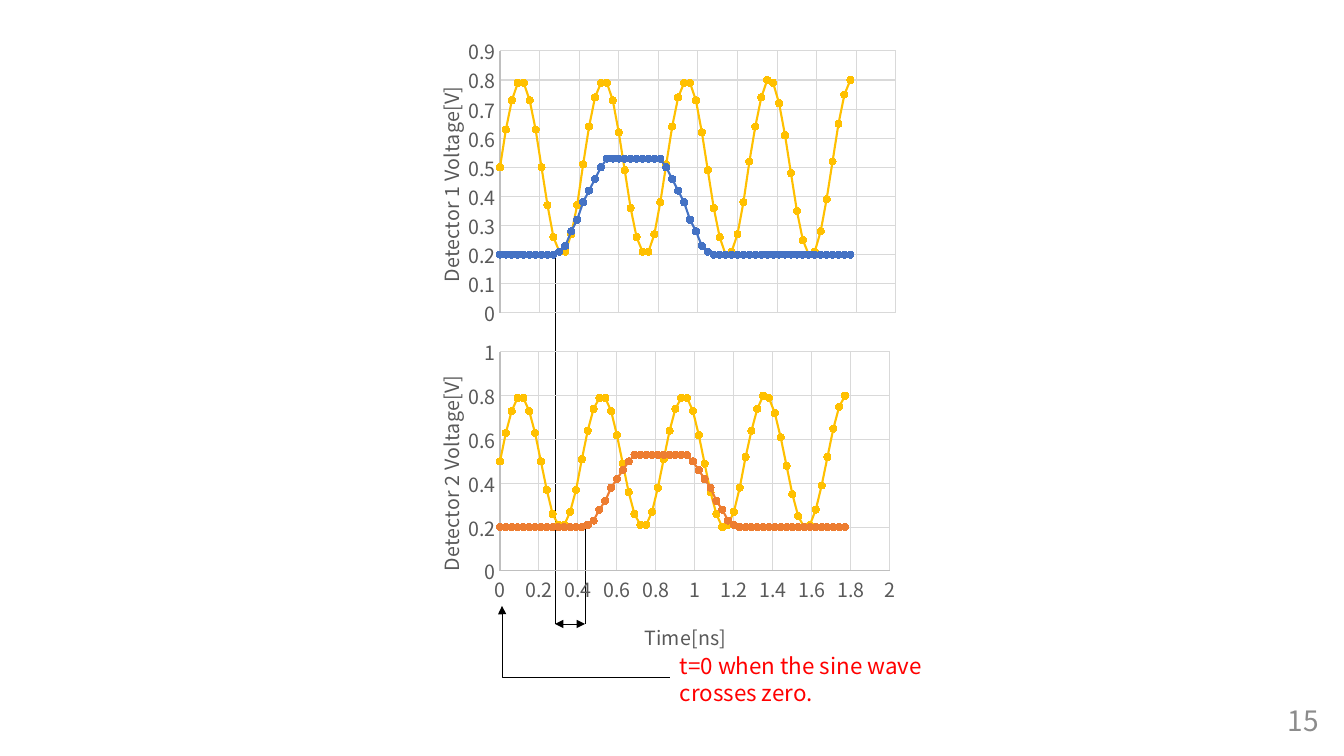
from math import sin

from lxml.etree import SubElement
from pptx import Presentation
from pptx.chart.data import XyChartData
from pptx.dml.color import RGBColor
from pptx.enum.chart import XL_CHART_TYPE as ChartType, XL_MARKER_STYLE as Marker
from pptx.enum.chart import XL_TICK_MARK as Tick
from pptx.enum.shapes import MSO_CONNECTOR as Connector
from pptx.enum.text import MSO_ANCHOR as Anchor, PP_ALIGN as Align
from pptx.oxml.ns import qn
from pptx.util import Pt

FONT = "Noto Sans CJK KR"
BLACK = RGBColor(0x00, 0x00, 0x00)
RED = RGBColor(0xFF, 0x00, 0x00)
BLUE = RGBColor(0x44, 0x72, 0xC4)
ORANGE = RGBColor(0xED, 0x7D, 0x31)
YELLOW = RGBColor(0xFF, 0xC0, 0x00)
LABEL_GRAY = RGBColor(0x59, 0x59, 0x59)
NUMBER_GRAY = RGBColor(0x8C, 0x8C, 0x8C)
AXIS_GRAY = RGBColor(0xBF, 0xBF, 0xBF)
GRID_GRAY = RGBColor(0xD9, 0xD9, 0xD9)

SAMPLES = 60
TIMES = [round(0.03 * i, 2) for i in range(SAMPLES)]
SINE = [round(0.5 + 0.3 * sin(15 * t), 2) for t in TIMES]
RISE = [0.21, 0.23, 0.28, 0.32, 0.38, 0.42, 0.46, 0.5]


def px(n):
    return round(n * 914400 / 100.8)


def pulse(start):
    """Detector voltage whose rise begins at sample number start."""
    volts = [0.2] * start + RISE + [0.53] * 10 + RISE[::-1]
    return volts + [0.2] * (SAMPLES - len(volts))


def set_layout(parent, index, inner=False, **fractions):
    """Place a chart part by fractions of the chart's size."""
    layout = parent.find(qn("c:layout"))
    if layout is None:
        layout = SubElement(parent, qn("c:layout"))
        parent.insert(index, layout)
    manual = SubElement(layout, qn("c:manualLayout"))
    if inner:
        SubElement(manual, qn("c:layoutTarget"), val="inner")
    for key in "xy":
        SubElement(manual, qn(f"c:{key}Mode"), val="edge")
    for key, value in fractions.items():
        SubElement(manual, qn(f"c:{key}"), val=f"{value:.4f}")


class SlideBuilder:
    def __init__(self, prs):
        self.s = prs.slides.add_slide(prs.slide_layouts[6])

    def style_font(self, font, size, color):
        font.name, font.size, font.bold = FONT, Pt(size), False
        font.color.rgb = color

    def text(self, text, box, size, color, align=Align.LEFT, anchor=Anchor.TOP):
        tf = self.s.shapes.add_textbox(*map(px, box)).text_frame
        tf.word_wrap, tf.vertical_anchor = True, anchor
        p = tf.paragraphs[0]
        p.alignment = align
        r = p.add_run()
        r.text = text
        self.style_font(r.font, size, color)

    def connector(self, start, end, arrows=(), kind=Connector.STRAIGHT, shapes=None):
        """Draw a thin line; arrows names its ends, headEnd before tailEnd."""
        shapes = self.s.shapes if shapes is None else shapes
        line = shapes.add_connector(kind, *map(px, start + end))
        line.line.color.rgb, line.line.width = BLACK, Pt(0.5)
        for arrow in arrows:
            SubElement(line.line._get_or_add_ln(), qn(f"a:{arrow}"), type="triangle")
        SubElement(line._element.spPr, qn("a:effectLst"))
        return line

    def axis(self, axis, top, step):
        axis.minimum_scale, axis.maximum_scale, axis.major_unit = 0, top, step
        axis.major_tick_mark = axis.minor_tick_mark = Tick.NONE
        axis.has_major_gridlines = True
        axis.tick_labels.number_format = "General"
        axis.tick_labels.number_format_is_linked = False
        self.style_font(axis.tick_labels.font, 14, LABEL_GRAY)
        for line, color in ((axis.format.line, AXIS_GRAY),
                            (axis.major_gridlines.format.line, GRID_GRAY)):
            line.color.rgb, line.width = color, Pt(0.75)

    def axis_title(self, axis, text, corner, box, rotation=0):
        title = axis.axis_title
        tf = title.text_frame
        r = tf.paragraphs[0].add_run()
        r.text = text
        self.style_font(r.font, 14, LABEL_GRAY)
        body = tf._txBody.find(qn("a:bodyPr"))
        body.set("rot", str(rotation * 60000))
        body.set("vert", "horz")
        set_layout(title._element, 1, x=(corner[0] - box[0]) / box[2],
                   y=(corner[1] - box[1]) / box[3])

    def chart(self, box, plot_box, volts, color, top, step):
        data = XyChartData()
        for name, values in (("Series 1", volts), ("Series 2", SINE)):
            series = data.add_series(name)
            for t, v in zip(TIMES, values):
                series.add_data_point(t, v)
        chart = self.s.shapes.add_chart(
            ChartType.XY_SCATTER_LINES, *map(px, box), data).chart
        chart.has_legend = chart.has_title = False
        self.style_font(chart.font, 10, BLACK)
        plot = chart.plots[0]
        plot.vary_by_categories = False
        for series, shade in zip(plot.series, (color, YELLOW)):
            series.smooth = False
            series.format.line.color.rgb = shade
            series.format.line.width = Pt(1.5)
            marker = series.marker
            marker.style, marker.size = Marker.CIRCLE, 5
            marker.format.fill.solid()
            marker.format.fill.fore_color.rgb = shade
            marker.format.line.color.rgb = shade
        self.axis(chart.category_axis, 2, 0.2)
        self.axis(chart.value_axis, top, step)
        space = chart._chartSpace
        area = space.find(".//" + qn("c:plotArea"))
        set_layout(area, 0, inner=True,
                   x=(plot_box[0] - box[0]) / box[2],
                   y=(plot_box[1] - box[1]) / box[3],
                   w=plot_box[2] / box[2], h=plot_box[3] / box[3])
        SubElement(SubElement(area, qn("c:spPr")), qn("a:noFill"))
        clear = SubElement(space, qn("c:spPr"))
        SubElement(clear, qn("a:noFill"))
        SubElement(SubElement(clear, qn("a:ln")), qn("a:noFill"))
        space.find(qn("c:chart")).addnext(clear)
        return chart


def main():
    prs = Presentation()
    prs.slide_width, prs.slide_height = px(1344), px(756)
    b = SlideBuilder(prs)

    delay = b.s.shapes.add_group_shape().shapes
    b.connector((555, 254), (555, 624), shapes=delay)
    b.connector((585, 521), (585, 624), shapes=delay)
    b.connector((555, 624), (585, 624), ("headEnd", "tailEnd"), shapes=delay)

    b.text("t=0 when the sine wave crosses zero.", (670, 647, 277, 65), 16, RED)
    origin = b.connector((670, 677), (502, 606), ("tailEnd",), Connector.ELBOW)
    guides = origin._element.spPr.find(qn("a:prstGeom")).get_or_add_avLst()
    SubElement(guides, qn("a:gd"), name="adj1", fmla="val 99900")

    box = (402, 31, 504, 302)
    upper = b.chart(box, (500, 51, 396, 262), pulse(10), BLUE, 0.9, 0.1)
    upper.category_axis.visible = False
    b.axis_title(upper.value_axis, "Detector 1 Voltage[V]", (431, 83), box, -90)

    box = (402, 332, 504, 336)
    lower = b.chart(box, (500, 352, 390, 219), pulse(15), ORANGE, 1, 0.2)
    b.axis_title(lower.value_axis, "Detector 2 Voltage[V]", (431, 372), box, -90)
    b.axis_title(lower.category_axis, "Time[ns]", (641, 617), box)

    b.text("15", (1027, 700, 302, 40), 20, NUMBER_GRAY, Align.RIGHT, Anchor.MIDDLE)
    prs.save("out.pptx")


if __name__ == "__main__":
    main()
